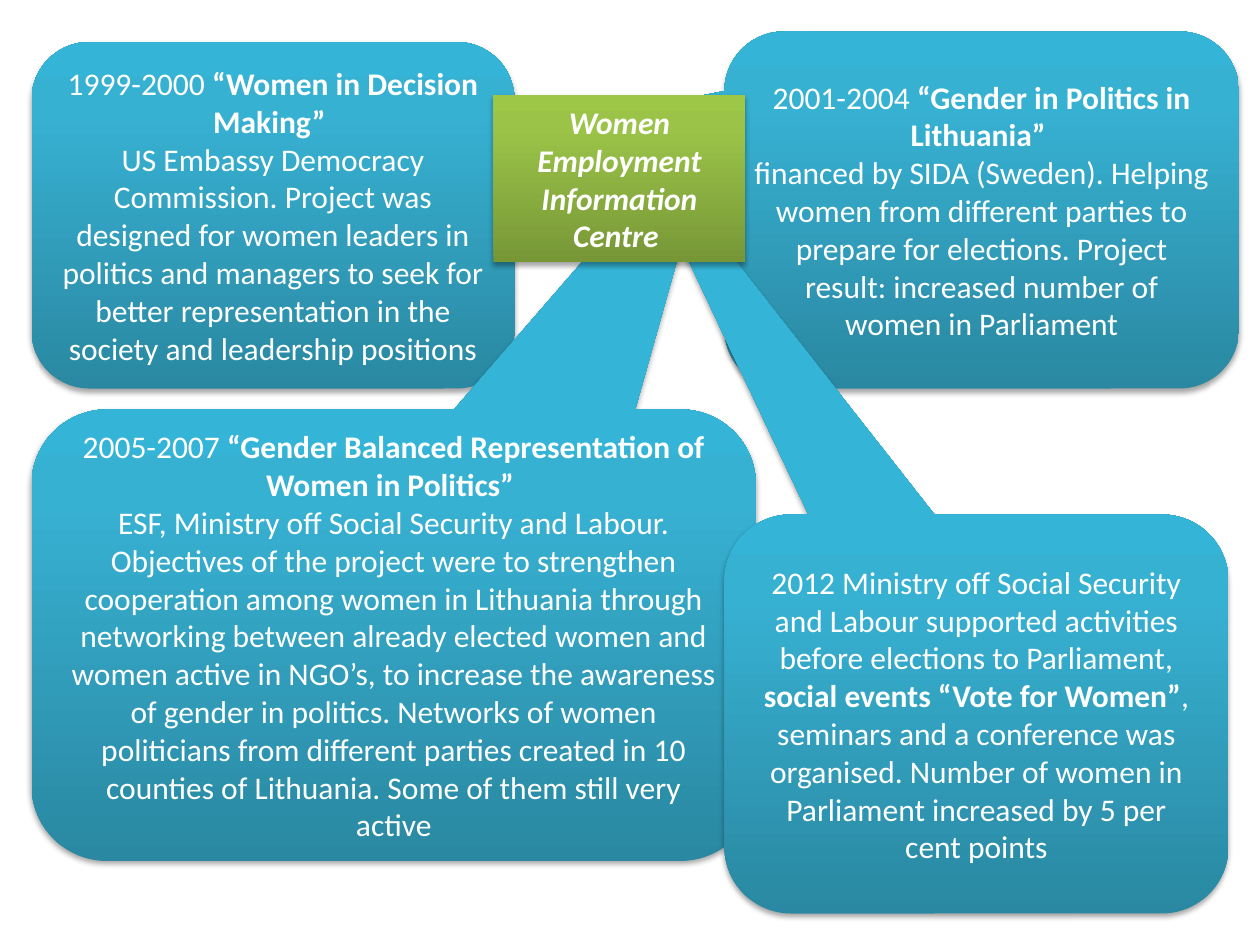
from copy import deepcopy

from lxml import etree
from pptx import Presentation
from pptx.dml.color import RGBColor
from pptx.enum.shapes import MSO_SHAPE
from pptx.enum.text import MSO_ANCHOR, PP_ALIGN
from pptx.oxml.ns import qn
from pptx.util import Pt

PX = 9525
CALLOUT = MSO_SHAPE.ROUNDED_RECTANGULAR_CALLOUT
RECTANGLE = MSO_SHAPE.RECTANGLE
MIDDLE = MSO_ANCHOR.MIDDLE
CENTER = PP_ALIGN.CENTER

WHITE = RGBColor(0xFF, 0xFF, 0xFF)
BLUES = [RGBColor(0x2A, 0x88, 0xA2), RGBColor(0x37, 0xB1, 0xD2), RGBColor(0x34, 0xB4, 0xD6)]
GREENS = [RGBColor(0x77, 0x97, 0x37), RGBColor(0x9B, 0xC3, 0x48), RGBColor(0x9D, 0xC7, 0x46)]
STOP_POSITIONS = [0, 0.8, 1]

CENTRE_BOX = (376, 72, 192, 128)
CENTRE_NAME = "Women Employment Information Centre "

PROJECTS = [
    ((24, 32, 368, 264), (480, 88), [
        [("1999-2000 ", False), ("“Women in Decision Making” ", True)],
        [("US Embassy Democracy Commission. Project was designed for women leaders in politics "
          "and managers to seek for better representation in the society and leadership "
          "positions", False)],
    ]),
    ((552, 24, 392, 272), (464, 87), [
        [("2001-2004 ", False), ("“Gender in Politics in Lithuania” ", True)],
        [("financed by SIDA (Sweden). Helping women from different parties to prepare for "
          "elections. Project result: increased number of women in Parliament", False)],
    ]),
    ((24, 312, 552, 344), (550, 77), [
        [("2005-2007 ", False),
         ("“Gender Balanced Representation of Women in Politics” ", True)],
        [("ESF, Ministry off Social Security and Labour. Objectives of the project were to "
          "strengthen cooperation among women in Lithuania through networking between already "
          "elected women and women active in NGO’s, to increase the awareness of gender in "
          "politics. Networks of women politicians from different parties created in 10 "
          "counties of Lithuania. Some of them still very active", False)],
    ]),
    ((552, 392, 384, 304), (471, 85), [
        [("2012 Ministry off Social Security and Labour supported activities before elections "
          "to Parliament, ", False),
         ("social events “Vote for Women”", True),
         (", seminars and a conference was organised. Number of women in Parliament increased "
          "by 5 per cent points", False)],
    ]),
]


def add_gradient(shape, colors):
    """Fill the shape with three colours running from bottom to top."""
    shape.fill.gradient()
    shape.fill.gradient_angle = 90
    stop_list = shape.element.spPr.find(".//" + qn("a:gsLst"))
    stop_list.append(deepcopy(stop_list[-1]))
    for stop, position, color in zip(shape.fill.gradient_stops, STOP_POSITIONS, colors):
        stop.position = position
        stop.color.rgb = color


def add_shadow(shape):
    """Give the shape a soft shadow straight below it."""
    shape.shadow.inherit = False
    effects = shape.element.spPr.find(qn("a:effectLst"))
    shadow = etree.SubElement(effects, qn("a:outerShdw"), blurRad="40000", dist="23000",
                              dir="5400000", rotWithShape="0")
    color = etree.SubElement(shadow, qn("a:srgbClr"), val="000000")
    etree.SubElement(color, qn("a:alpha"), val="35000")


def add_panel(page, kind, box, colors, paragraphs, italic=False):
    """Place a shaded shape with centred white text in the box."""
    shape = page.shapes.add_shape(kind, *(length * PX for length in box))
    add_gradient(shape, colors)
    shape.line.fill.background()
    add_shadow(shape)
    frame = shape.text_frame
    frame.word_wrap = True
    frame.vertical_anchor = MIDDLE
    frame.text = "\n" * (len(paragraphs) - 1)
    for para, parts in zip(frame.paragraphs, paragraphs):
        para.alignment = CENTER
        for text, bold in parts:
            span = para.add_run()
            span.text = text
            span.font.name = "Calibri"
            span.font.size = Pt(18)
            span.font.bold = bold
            span.font.italic = italic
            span.font.color.rgb = WHITE
    return shape


def add_project(page, box, tip, paragraphs):
    """Place a project callout whose pointer ends at the tip."""
    left, top, width, height = box
    callout = add_panel(page, CALLOUT, box, BLUES, paragraphs)
    callout.adjustments[0] = (tip[0] - left) / width - 0.5
    callout.adjustments[1] = (tip[1] - top) / height - 0.5


def main():
    """Build the slide of projects around the centre and save it."""
    deck = Presentation()
    deck.slide_width = 960 * PX
    deck.slide_height = 720 * PX
    page = deck.slides.add_slide(deck.slide_layouts[6])
    for box, tip, paragraphs in PROJECTS:
        add_project(page, box, tip, paragraphs)
    add_panel(page, RECTANGLE, CENTRE_BOX, GREENS, [[(CENTRE_NAME, True)]], italic=True)
    deck.save("out.pptx")


if __name__ == "__main__":
    main()
